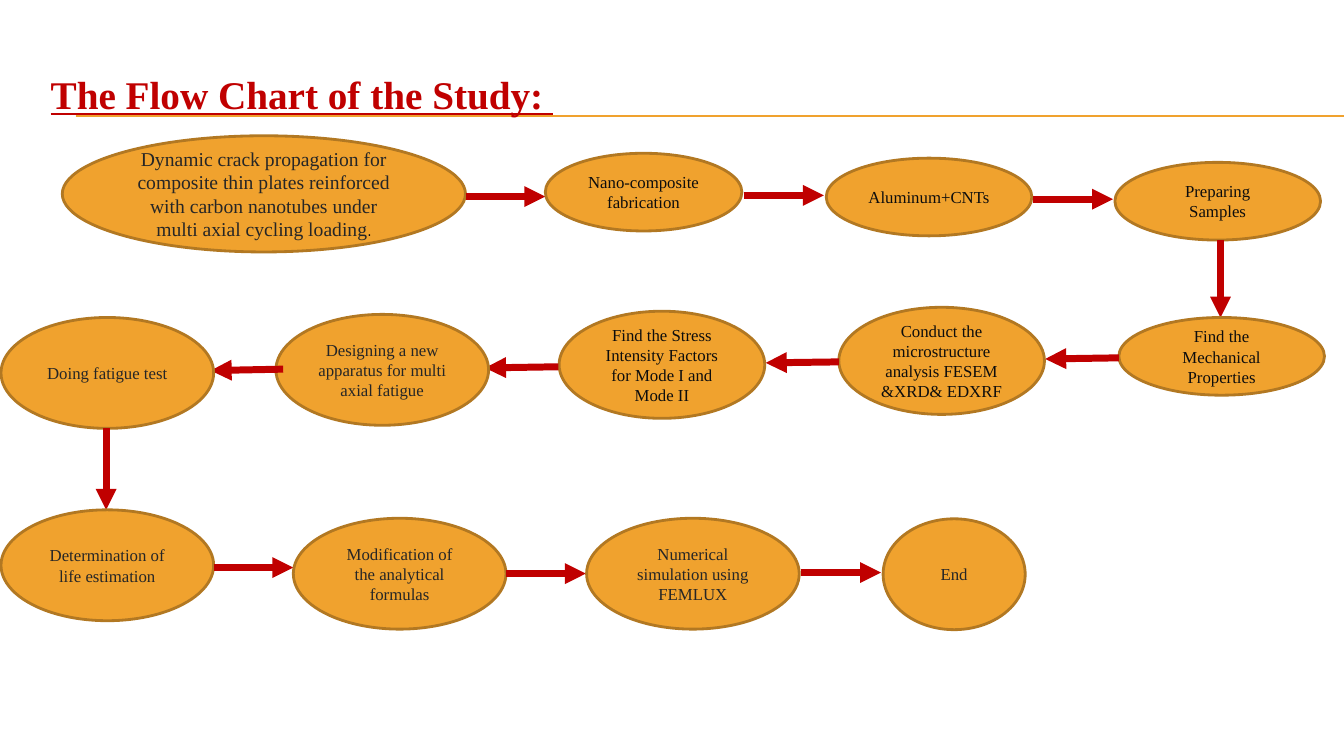
"""Build the flow chart slide of the study."""
from dataclasses import dataclass

import pptx
import pptx.dml.color
import pptx.enum.shapes
import pptx.enum.text
import pptx.oxml.xmlchemy
import pptx.util

Pt = pptx.util.Pt
RGB = pptx.dml.color.RGBColor.from_string
OxmlElement = pptx.oxml.xmlchemy.OxmlElement
MSO_SHAPE = pptx.enum.shapes.MSO_SHAPE
MSO_ANCHOR = pptx.enum.text.MSO_ANCHOR
PP_ALIGN = pptx.enum.text.PP_ALIGN


@dataclass(frozen=True)
class Theme:
    red: str = "C00000"
    orange: str = "F0A22E"
    brown: str = "B27822"
    black: str = "0D0D0D"
    grey: str = "262626"
    font: str = "Times New Roman"
    narrow: str = "Arial Narrow"
    title: int = 28
    lead: int = 14
    label: int = 12


theme = Theme()


def add_run(p, text, size, color, font=theme.font):
    r = p.add_run()
    r.text = text
    r.font.name = font
    r.font.size = Pt(size)
    r.font.color.rgb = RGB(color)
    return r


def add_line(s, ends, color, width, arrow=False):
    line = s.shapes.add_connector(
        pptx.enum.shapes.MSO_CONNECTOR.STRAIGHT, *[Pt(v) for v in ends])
    line.line.color.rgb = RGB(color)
    line.line.width = Pt(width)
    if arrow:
        tail = OxmlElement("a:tailEnd")
        tail.set("type", "triangle")
        line._element.spPr.get_or_add_ln().append(tail)
    line._element.spPr.append(OxmlElement("a:effectLst"))
    return line


prs = pptx.Presentation()
prs.slide_width, prs.slide_height = Pt(960), Pt(540)
s = prs.slides.add_slide(prs.slide_layouts[5])

title = s.shapes.title
title.left, title.top, title.width, title.height = Pt(29), Pt(46.8), Pt(912), Pt(46)
tf = title.text_frame
tf.auto_size = pptx.enum.text.MSO_AUTO_SIZE.NONE
tf.vertical_anchor = MSO_ANCHOR.TOP
p = tf.paragraphs[0]
p.alignment = PP_ALIGN.LEFT
r = add_run(p, "The Flow Chart of the Study: ", theme.title, theme.red)
r.font.bold = True
r.font.underline = True

for y in (82.8, 83.5):
    rule = add_line(s, (54, y, 960, y), theme.orange, 0.75)
    title._element.addprevious(rule._element)

small, medium, large = (146.9, 55.5), (146.9, 76.5), (151.9, 79.2)
steps = [
    ("Dynamic crack propagation for composite thin plates reinforced with "
     "carbon nanotubes under multi axial cycling loading",
     (44.5, 97), (288, 83), theme.grey, None),
    ("Nano-composite fabrication",
     (389.5, 109.5), (140.4, 55.5), theme.black, (332.6, 140.4, 389.5, 140.4)),
    ("Aluminum+CNTs",
     (590.2, 113), small, theme.black, (531.4, 139.6, 588.5, 139.6)),
    ("Preparing Samples",
     (796.4, 116), small, theme.black, (738, 142.3, 795, 142.3)),
    ("Find the Mechanical Properties",
     (799.2, 226.8), small, theme.black, (871.8, 171.4, 871.8, 226.8)),
    ("Conduct the microstructure analysis FESEM &XRD& EDXRF",
     (599.2, 219.5), medium, theme.black, (799.2, 255.6, 746.6, 256.4)),
    ("Find the Stress Intensity Factors for Mode I and Mode II",
     (399.4, 222.3), medium, theme.black, (599.2, 258.5, 547, 259.2)),
    ("Designing a new apparatus for multi axial fatigue",
     (197.1, 224.6), large, theme.grey, (398.9, 262, 346.5, 262.8)),
    ("Doing fatigue test",
     (0.7, 226.8), large, theme.grey, (202.3, 263.7, 150.5, 264.7)),
    ("Determination of life estimation",
     (0.7, 364.2), large, theme.grey, (75.8, 306, 75.8, 364.2)),
    ("Modification of the analytical formulas",
     (209.5, 370.2), large, theme.grey, (152.6, 405.4, 209.5, 405.4)),
    ("Numerical simulation using FEMLUX",
     (419, 370.2), large, theme.grey, (361.4, 409.7, 418.5, 409.7)),
    ("End",
     (630.8, 370.6), (101.5, 79.2), theme.grey, (572.2, 409, 629.3, 409)),
]
for text, at, size, color, arrow in steps:
    if arrow:
        add_line(s, arrow, theme.red, 5, arrow=True)
    sp = s.shapes.add_shape(MSO_SHAPE.OVAL, *[Pt(v) for v in at + size])
    sp.shadow.inherit = False
    sp.fill.solid()
    sp.fill.fore_color.rgb = RGB(theme.orange)
    sp.line.color.rgb = RGB(theme.brown)
    sp.line.width = Pt(2)
    tf = sp.text_frame
    tf.word_wrap = True
    tf.vertical_anchor = MSO_ANCHOR.MIDDLE
    p = tf.paragraphs[0]
    p.alignment = PP_ALIGN.CENTER
    add_run(p, text, theme.label if arrow else theme.lead, color)
    if not arrow:
        add_run(p, ".", theme.label, theme.black, theme.narrow)

prs.save("out.pptx")
